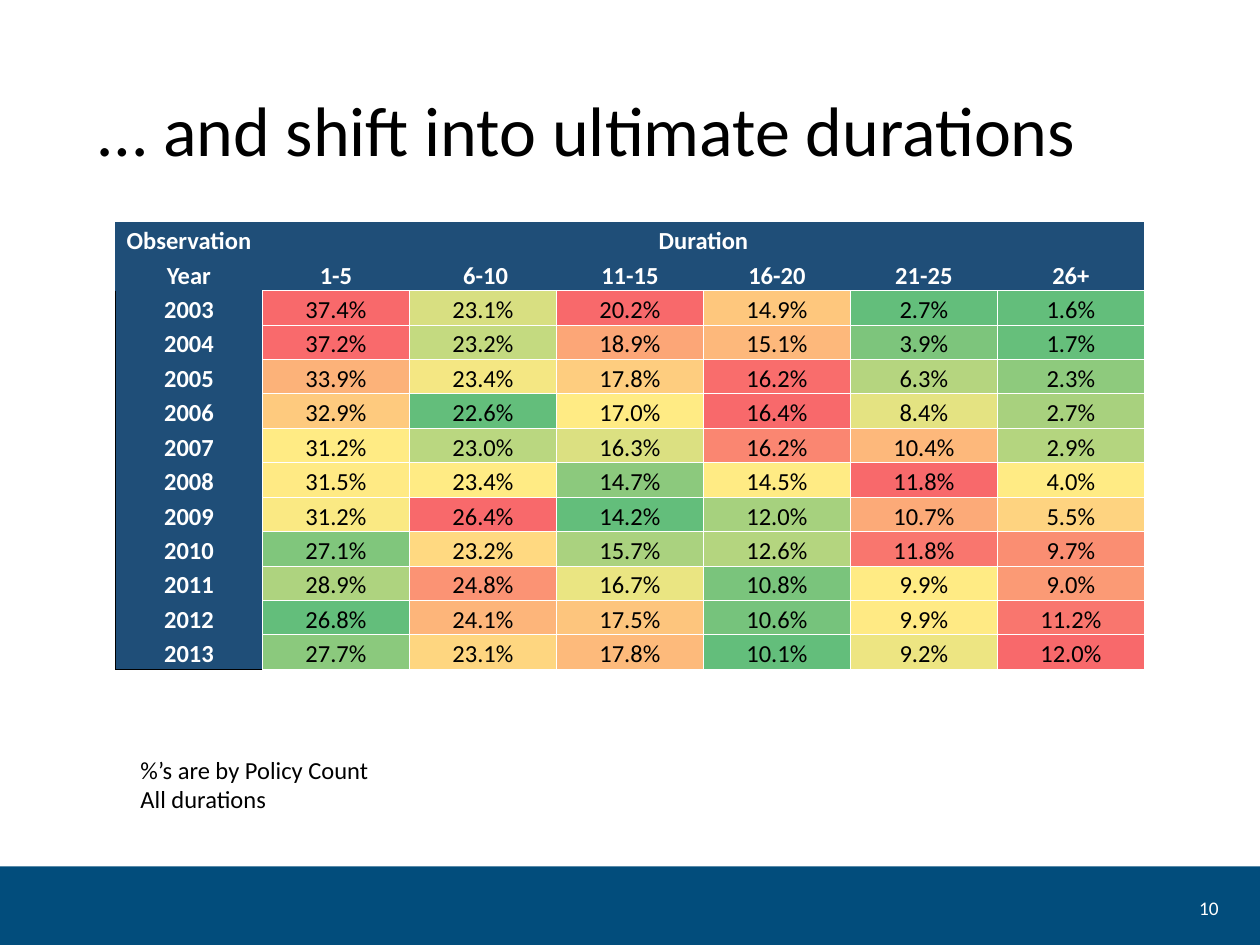
from lxml.etree import SubElement
from pptx import Presentation
from pptx.dml.color import RGBColor
from pptx.enum.shapes import MSO_SHAPE as Shape
from pptx.enum.text import MSO_ANCHOR as Anchor, PP_ALIGN as Align
from pptx.oxml.ns import qn
from pptx.util import Pt

FONT = "Calibri"
COLORS = {"footer": "024D7C", "header": "1F4E78", "white": "FFFFFF", "black": "000000"}

DURATIONS = ["1-5", " 6-10", "11-15", "16-20", "21-25", "26+"]
SHARES = {
    2003: [37.4, 23.1, 20.2, 14.9, 2.7, 1.6],
    2004: [37.2, 23.2, 18.9, 15.1, 3.9, 1.7],
    2005: [33.9, 23.4, 17.8, 16.2, 6.3, 2.3],
    2006: [32.9, 22.6, 17.0, 16.4, 8.4, 2.7],
    2007: [31.2, 23.0, 16.3, 16.2, 10.4, 2.9],
    2008: [31.5, 23.4, 14.7, 14.5, 11.8, 4.0],
    2009: [31.2, 26.4, 14.2, 12.0, 10.7, 5.5],
    2010: [27.1, 23.2, 15.7, 12.6, 11.8, 9.7],
    2011: [28.9, 24.8, 16.7, 10.8, 9.9, 9.0],
    2012: [26.8, 24.1, 17.5, 10.6, 9.9, 11.2],
    2013: [27.7, 23.1, 17.8, 10.1, 9.2, 12.0],
}
# Heat colours follow the unrounded shares, so equal labels can differ in shade.
HEAT = {
    2003: "F8696B D8DF81 F8696B FEC77D 63BE7B 63BE7B",
    2004: "F96A6C C4DA80 FCA677 FDB87B 7DC57C 66BF7B",
    2005: "FCB279 F4E783 FECD7F F96D6C B5D57F 8ECA7D",
    2006: "FECA7E 63BE7B FFEB84 F8696B E4E382 A8D17E",
    2007: "FFEB84 BAD780 DBE081 FA8671 FDB87B B4D57F",
    2008: "FFEA84 FFEB84 8CC97D FFEB84 F8696B FFEB84",
    2009: "FAE983 F8696B 63BE7B A6D17E FCAA78 FED380",
    2010: "80C67C FFD981 AAD27F B4D57F F9766E FA8E72",
    2011: "AED37F FB9374 EAE582 7AC47C FFEB84 FB9A75",
    2012: "63BE7B FDB57A FDC57D 76C37C FFEA84 F9766E",
    2013: "8BC97D FED680 FDBA7B 63BE7B EDE582 F8696B",
}

COLUMN_WIDTH, ROW_HEIGHT = 84, 19.7
CELL_FORMAT = {
    "vertical_anchor": Anchor.BOTTOM,
    "margin_left": Pt(0.72),
    "margin_right": Pt(0.72),
    "margin_top": Pt(0.72),
    "margin_bottom": 0,
}
WHITE_GRID = dict.fromkeys("LRTB", "white")


def apply(target, values):
    for name, value in values.items():
        setattr(target, name, value)


def style_paragraph(paragraph, size, color, bold=False, **layout):
    apply(paragraph, layout)
    apply(paragraph.font, {"name": FONT, "size": Pt(size), "bold": bold})
    paragraph.font.color.rgb = RGBColor.from_string(COLORS[color])


def add_text(slide, box, lines, size, color="black", anchor=Anchor.TOP, **layout):
    frame = slide.shapes.add_textbox(*map(Pt, box)).text_frame
    apply(frame, {"word_wrap": True, "vertical_anchor": anchor, "text": "\n".join(lines)})
    for paragraph in frame.paragraphs:
        style_paragraph(paragraph, size, color, **layout)


def add_footer_bar(slide):
    bar = slide.shapes.add_shape(Shape.RECTANGLE, *map(Pt, (0, 495, 720, 46.8)))
    bar.shadow.inherit = False
    bar.fill.solid()
    bar.fill.fore_color.rgb = RGBColor.from_string(COLORS["footer"])
    bar.line.fill.background()


def set_borders(cell, borders):
    """Draw the sides named in borders (L, R, T, B) and hide the others."""
    properties = cell._tc.get_or_add_tcPr()
    for side in "LRTB":
        line = SubElement(properties, qn(f"a:ln{side}"), w=str(Pt(0.5)))
        if side in borders:
            fill = SubElement(line, qn("a:solidFill"))
            SubElement(fill, qn("a:srgbClr"), val=COLORS[borders[side]])
        else:
            SubElement(line, qn("a:noFill"))


def fill_cell(cell, text, fill, borders, color="white", bold=True):
    set_borders(cell, borders)
    cell.fill.solid()
    cell.fill.fore_color.rgb = RGBColor.from_string(fill)
    apply(cell, CELL_FORMAT)
    cell.text = text
    style_paragraph(cell.text_frame.paragraphs[0], 14, color, bold, alignment=Align.CENTER)


def add_headings(table):
    top = ["Observation", "Duration"] + [""] * (len(DURATIONS) - 1)
    for column, (upper, lower) in enumerate(zip(top, ["Year"] + DURATIONS)):
        fill_cell(table.cell(0, column), upper, COLORS["header"], {})
        underline = {"B": "white"} if column else {}
        fill_cell(table.cell(1, column), lower, COLORS["header"], underline)
    table.cell(0, 1).merge(table.cell(0, len(DURATIONS)))


def add_heat_table(slide):
    row_count, column_count = len(SHARES) + 2, len(DURATIONS) + 1
    box = (66, 126.7, COLUMN_WIDTH * column_count, ROW_HEIGHT * row_count)
    table = slide.shapes.add_table(row_count, column_count, *map(Pt, box)).table
    apply(table, {"first_row": False, "horz_banding": False})
    for column in table.columns:
        column.width = Pt(COLUMN_WIDTH)
    for row in table.rows:
        row.height = Pt(ROW_HEIGHT)

    add_headings(table)
    for row, (year, shares) in enumerate(SHARES.items(), start=2):
        edges = {"L": "black", "R": "white"}
        if row == row_count - 1:
            edges["B"] = "black"
        fill_cell(table.cell(row, 0), str(year), COLORS["header"], edges)
        for column, (share, heat) in enumerate(zip(shares, HEAT[year].split()), start=1):
            fill_cell(table.cell(row, column), f"{share:.1f}%", heat, WHITE_GRID, "black", False)


def main():
    deck = Presentation()
    apply(deck, {"slide_width": Pt(720), "slide_height": Pt(540)})
    slide = deck.slides.add_slide(deck.slide_layouts[6])
    add_footer_bar(slide)
    add_text(slide, (49.5, 26, 621, 101), ["… and shift into ultimate durations"], 40,
             anchor=Anchor.MIDDLE, line_spacing=0.9)
    add_text(slide, (665, 511, 38.4, 16), ["10"], 11, "white",
             anchor=Anchor.MIDDLE, alignment=Align.RIGHT)
    add_heat_table(slide)
    add_text(slide, (73.2, 427.7, 567, 41), ["%’s are by Policy Count", "All durations"], 14)
    deck.save("out.pptx")


if __name__ == "__main__":
    main()
